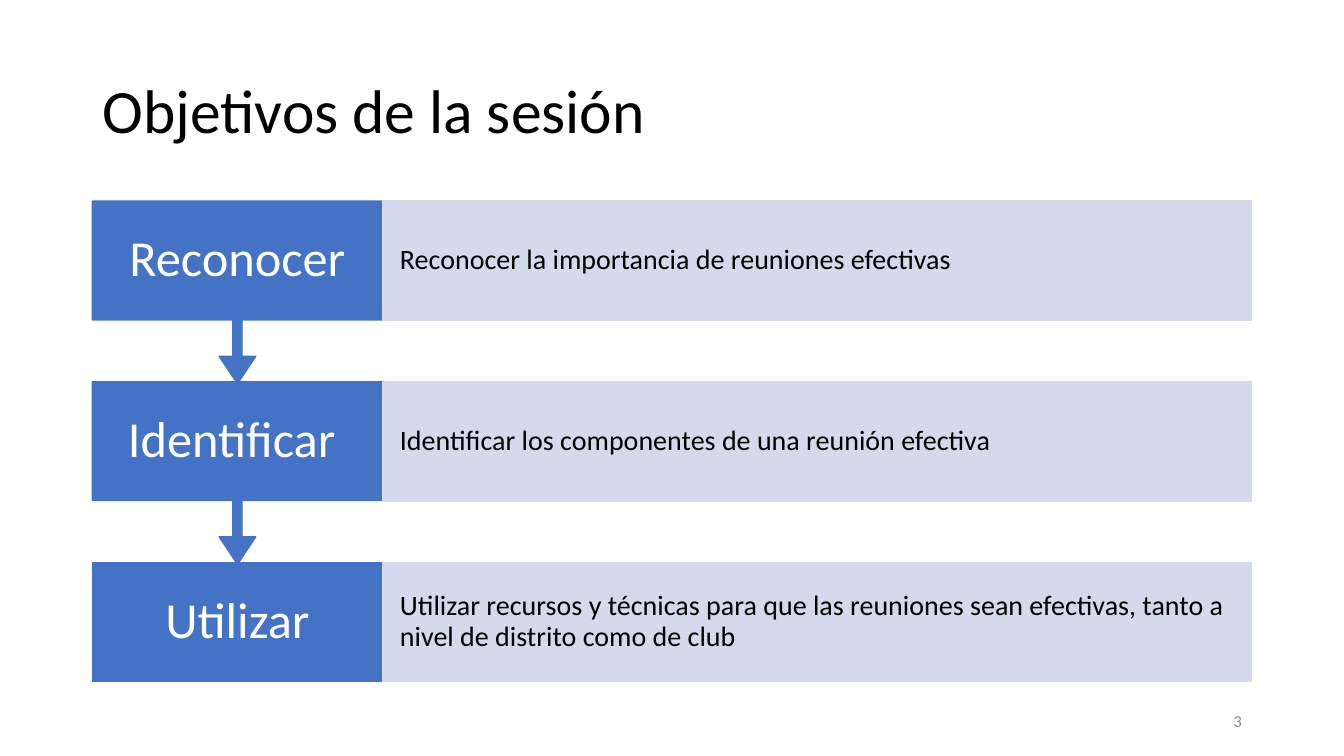
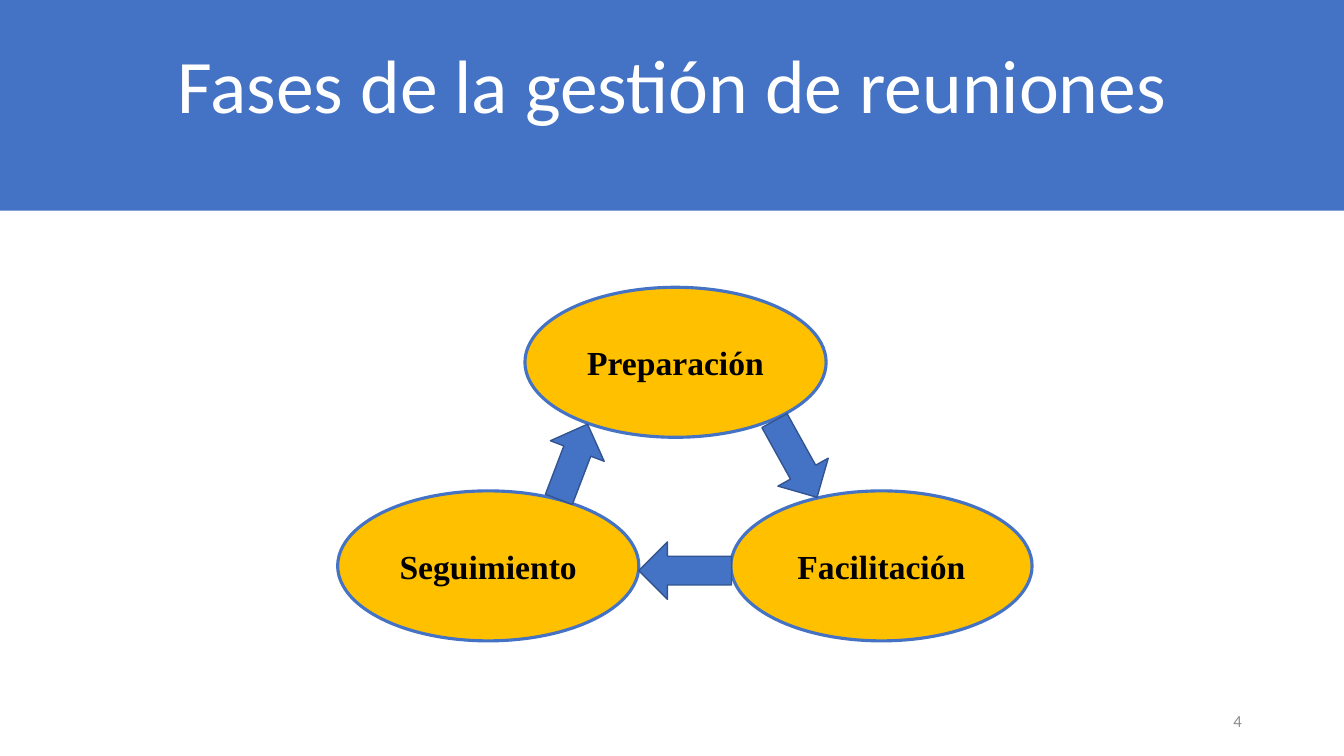
from dataclasses import dataclass

from pptx import Presentation
from pptx.dml.color import RGBColor
from pptx.enum.shapes import MSO_SHAPE as Shape
from pptx.enum.text import MSO_ANCHOR as Anchor, MSO_AUTO_SIZE as AutoSize, PP_ALIGN as Align
from pptx.util import Cm, Pt

SLIDE_WIDTH, SLIDE_HEIGHT = 33.87, 19.05
LEFT, CONTENT_WIDTH = 2.33, 29.21


@dataclass(frozen=True)
class Theme:
    blue: str = "4472C4"
    dark_blue: str = "325491"
    pale_blue: str = "D4D9EC"
    amber: str = "FFC000"
    black: str = "000000"
    white: str = "FFFFFF"
    grey: str = "8C8C8C"
    sans: str = "Calibri"
    serif: str = "Times New Roman"
    title_size: int = 44
    banner_size: int = 54
    step_size: int = 36
    phase_size: int = 24
    detail_size: int = 20
    number_size: int = 12


class DeckBuilder:
    """Build styled slides and keep the current page."""

    def __init__(self, theme):
        self.theme = theme
        self.deck = Presentation()
        self.deck.slide_width, self.deck.slide_height = Cm(SLIDE_WIDTH), Cm(SLIDE_HEIGHT)
        self.page = None

    def start_page(self, title, number, place, size, colour, **layout):
        self.page = self.deck.slides.add_slide(self.deck.slide_layouts[5])
        box = self.page.shapes.title
        box.left, box.top, box.width, box.height = map(Cm, place)
        self.set_text(box, title, size, colour, spacing=0.9, **layout)
        footer = self.page.shapes.add_textbox(*map(Cm, (23.93, 17.66, 7.62, 1.02)))
        self.set_text(footer, str(number), self.theme.number_size, self.theme.grey,
                      align=Align.RIGHT)

    def set_text(self, box, text, size, colour, align=Align.LEFT, anchor=Anchor.MIDDLE,
                 spacing=1.0, font=None, bold=False, inset=0.25):
        frame = box.text_frame
        frame.text = text
        para = frame.paragraphs[0]
        span_font = para.runs[0].font
        formats = [
            (frame, {"word_wrap": True, "auto_size": AutoSize.NONE, "vertical_anchor": anchor,
                     "margin_left": Cm(inset), "margin_right": Cm(inset)}),
            (para, {"alignment": align, "line_spacing": spacing}),
            (span_font, {"name": font or self.theme.sans, "size": Pt(size), "bold": bold}),
        ]
        for target, values in formats:
            for name, value in values.items():
                setattr(target, name, value)
        span_font.color.rgb = RGBColor.from_string(colour)

    def shape(self, kind, place, fill, line=None, line_width=1, rotation=0, adjust=()):
        box = self.page.shapes.add_shape(kind, *map(Cm, place))
        box.shadow.inherit = False
        box.rotation = rotation
        box.fill.solid()
        box.fill.fore_color.rgb = RGBColor.from_string(fill)
        box.line.color.rgb = RGBColor.from_string(line or fill)
        box.line.width = Pt(line_width)
        for index, value in enumerate(adjust):
            box.adjustments[index] = value
        return box

    def band(self, height):
        box = self.shape(Shape.RECTANGLE, (0, 0, SLIDE_WIDTH, height), self.theme.blue)
        box.line.fill.background()
        self.page.shapes.title.element.addprevious(box.element)

    def step(self, top, name, detail, is_last):
        theme = self.theme
        name_width, row_height, callout_height = 7.31, 3.01, 4.6
        if is_last:
            kind, height, adjust = Shape.RECTANGLE, row_height, ()
        else:
            kind, height = Shape.DOWN_ARROW_CALLOUT, callout_height
            adjust = (0.05, 0.1, 0.15, 0.65)
        box = self.shape(kind, (LEFT, top, name_width, height), theme.blue, adjust=adjust)
        self.set_text(box, name, theme.step_size, theme.white, Align.CENTER,
                      spacing=0.9, inset=0.5)
        place = (LEFT + name_width, top, CONTENT_WIDTH - name_width, row_height)
        box = self.shape(Shape.RECTANGLE, place, theme.pale_blue)
        self.set_text(box, detail, theme.detail_size, theme.black, spacing=0.9, inset=0.44)

    def phase(self, left, top, name):
        theme = self.theme
        box = self.shape(Shape.OVAL, (left, top, 7.59, 3.78), theme.amber, theme.blue, 2.25)
        self.set_text(box, name, theme.phase_size, theme.black, Align.CENTER,
                      font=theme.serif, bold=True)

    def phase_arrow(self, left, top, length, rotation):
        self.shape(Shape.DOWN_ARROW, (left, top, 1.45, length), self.theme.blue,
                   self.theme.dark_blue, rotation=rotation)


def build_objectives(builder):
    theme = builder.theme
    builder.start_page("Objetivos de la sesión", 3, (LEFT, 1.01, CONTENT_WIDTH, 3.68),
                       theme.title_size, theme.black)
    steps = [
        ("Reconocer", "Reconocer la importancia de reuniones efectivas"),
        ("Identificar ", "Identificar los componentes de una reunión efectiva"),
        ("Utilizar", "Utilizar recursos y técnicas para que las reuniones sean efectivas, "
                     "tanto a nivel de distrito como de club"),
    ]
    for index, (name, detail) in enumerate(steps):
        builder.step(5.07 + 4.55 * index, name, detail, index == len(steps) - 1)


def build_phases(builder):
    theme = builder.theme
    builder.start_page("Fases de la gestión de reuniones", 4, (LEFT, 0.81, CONTENT_WIDTH, 2.59),
                       theme.banner_size, theme.white, align=Align.CENTER, anchor=Anchor.BOTTOM)
    builder.band(5.31)
    for phase in [(13.23, 7.24, "Preparación"), (8.51, 12.37, "Seguimiento"),
                  (18.42, 12.37, "Facilitación")]:
        builder.phase(*phase)
    for arrow in [(19.33, 10.46, 2.21, 331), (16.54, 13.21, 2.34, 90),
                  (13.72, 10.62, 2.03, 200.9)]:
        builder.phase_arrow(*arrow)


def main():
    builder = DeckBuilder(Theme())
    build_objectives(builder)
    build_phases(builder)
    builder.deck.save("out.pptx")


if __name__ == "__main__":
    main()
